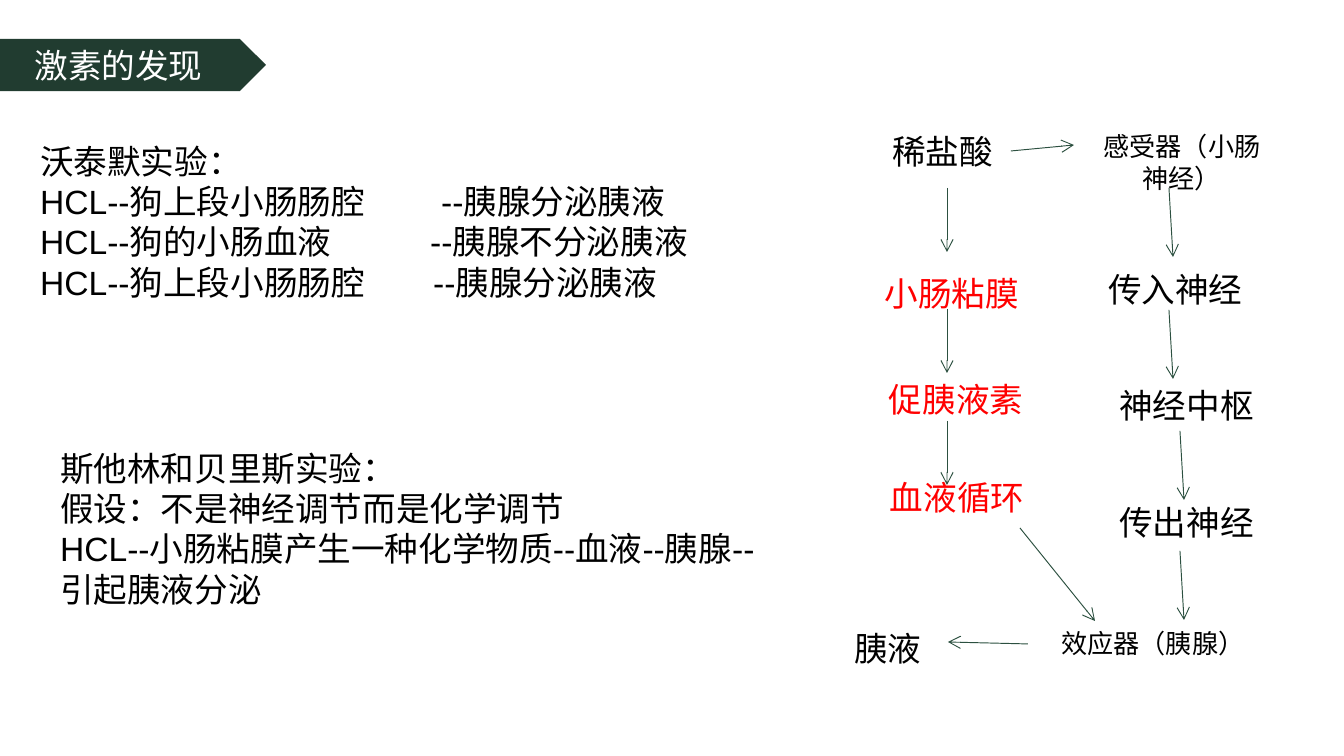
from dataclasses import dataclass

from lxml.etree import SubElement
from pptx import Presentation
from pptx.dml.color import RGBColor
from pptx.enum.shapes import MSO_CONNECTOR, MSO_SHAPE
from pptx.enum.text import MSO_ANCHOR, MSO_AUTO_SIZE, PP_ALIGN
from pptx.oxml.ns import qn
from pptx.util import Pt

EMU_PER_PX = 914400 / 134.4


def px(length):
    return round(length * EMU_PER_PX)


@dataclass(frozen=True)
class Theme:
    font: str = "Arial"
    body_size: int = 18
    note_size: int = 14
    line_width: float = 0.5
    banner: str = "213C30"
    banner_text: str = "FFFFFF"
    arrow: str = "2C5040"
    text: str = "000000"
    hormone: str = "FF0000"


def write_text(frame, lines, *, font, size, color, align=PP_ALIGN.LEFT, tabs=()):
    frame.word_wrap = True
    for index, line in enumerate(lines):
        paragraph = frame.paragraphs[0] if index == 0 else frame.add_paragraph()
        paragraph.alignment = align
        if "\t" in line:
            stops = SubElement(paragraph._p.get_or_add_pPr(), qn("a:tabLst"))
            SubElement(stops, qn("a:tab"), pos=str(px(tabs[index])), algn="l")
        run = paragraph.add_run()
        run.text = line
        run.font.name = font
        run.font.size = Pt(size)
        run.font.color.rgb = RGBColor.from_string(color)


class SlideBuilder:
    def __init__(self, slide, theme):
        self.slide = slide
        self.theme = theme

    def banner(self, title, left, top, width, height):
        plate = self.slide.shapes.add_shape(
            MSO_SHAPE.PENTAGON, px(left), px(top), px(width), px(height))
        plate.shadow.inherit = False
        plate.fill.solid()
        plate.fill.fore_color.rgb = RGBColor.from_string(self.theme.banner)
        plate.line.fill.background()
        plate.text_frame.vertical_anchor = MSO_ANCHOR.MIDDLE
        write_text(plate.text_frame, [title], font=self.theme.font,
                   size=self.theme.body_size, color=self.theme.banner_text,
                   align=PP_ALIGN.CENTER)

    def text(self, lines, left, top, width, height=54, *, size=None, color=None, **style):
        box = self.slide.shapes.add_textbox(px(left), px(top), px(width), px(height))
        box.text_frame.auto_size = MSO_AUTO_SIZE.SHAPE_TO_FIT_TEXT
        write_text(box.text_frame, lines, font=self.theme.font,
                   size=size or self.theme.body_size,
                   color=color or self.theme.text, **style)

    def arrow(self, x1, y1, x2, y2):
        link = self.slide.shapes.add_connector(
            MSO_CONNECTOR.STRAIGHT, px(x1), px(y1), px(x2), px(y2))
        link.line.color.rgb = RGBColor.from_string(self.theme.arrow)
        link.line.width = Pt(self.theme.line_width)
        SubElement(link.line._get_or_add_ln(), qn("a:tailEnd"), type="arrow")
        SubElement(link._element.spPr, qn("a:effectLst"))


def main():
    deck = Presentation()
    deck.slide_width, deck.slide_height = px(1344), px(756)
    theme = Theme()
    page = SlideBuilder(deck.slides.add_slide(deck.slide_layouts[6]), theme)

    page.banner("激素的发现", -16, 39, 282, 52)
    page.text(["沃泰默实验：",
               "HCL--狗上段小肠肠腔\t--胰腺分泌胰液",
               "HCL--狗的小肠血液\t--胰腺不分泌胰液",
               "HCL--狗上段小肠肠腔\t--胰腺分泌胰液"],
              27, 134, 852, 216, tabs=(0, 401, 390, 393))
    page.text(["斯他林和贝里斯实验：",
               "假设：不是神经调节而是化学调节",
               "HCL--小肠粘膜产生一种化学物质--血液--胰腺--引起胰液分泌"],
              47, 441, 728, 176)

    page.text(["感受器（小肠神经）"], 1085, 124, 194, 77,
              size=theme.note_size, align=PP_ALIGN.CENTER)
    page.text(["效应器（胰腺）"], 1048, 621, 266, 46, size=theme.note_size)
    for step, left, top, width in (("稀盐酸", 879, 124, 132),
                                   ("胰液", 841, 621, 132),
                                   ("传入神经", 1095, 262, 165),
                                   ("神经中枢", 1106, 378, 164),
                                   ("传出神经", 1106, 495, 181)):
        page.text([step], left, top, width)
    for step, left, top, width in (("小肠粘膜", 852, 266, 200),
                                   ("促胰液素", 860, 372, 192),
                                   ("血液循环", 852, 470, 210)):
        page.text([step], left, top, width, color=theme.hormone, align=PP_ALIGN.CENTER)

    for x, y in ((1169, 188), (1169, 310), (1180, 431), (1180, 551)):
        page.arrow(x, y, x + 4, y + 69)
    for y in (188, 309, 421):
        page.arrow(947, y, 947, y + 64)
    page.arrow(1011, 151, 1074, 145)
    page.arrow(1020, 528, 1095, 621)
    page.arrow(1028, 644, 948, 642)

    deck.save("out.pptx")


if __name__ == "__main__":
    main()
